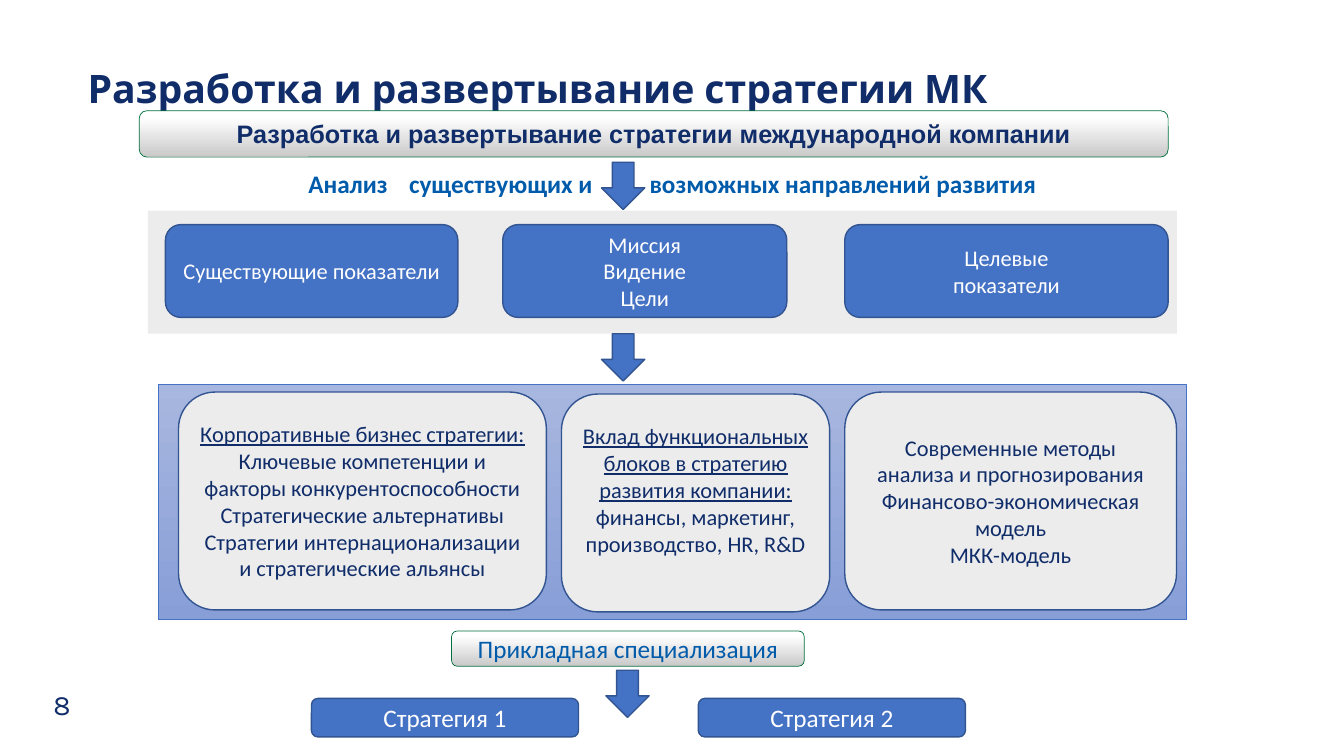
from dataclasses import dataclass

from lxml import etree
from pptx import Presentation
from pptx import util as u
from pptx.dml import color
from pptx.enum import shapes, text
from pptx.oxml import ns


@dataclass(frozen=True)
class Theme:
    navy: str = "102D69"
    accent: str = "005BAA"
    blue: str = "4472C4"
    edge: str = "325491"
    green: str = "00703C"
    pale: str = "ECECED"
    white: str = "FFFFFF"
    silver: tuple = (("C9C9C9", 0), ("FFFFFF", 0.86))
    haze: tuple = (("A8B7DF", 0), ("889ED7", 1))
    head: str = "Karla"
    banner: str = "Arial"
    body: str = "Calibri"
    title: int = 28
    number: int = 20
    large: int = 18
    small: int = 16


T = Theme()
KIND = shapes.MSO_SHAPE
CENTER = text.PP_ALIGN.CENTER
TOP, MIDDLE = text.MSO_ANCHOR.TOP, text.MSO_ANCHOR.MIDDLE


def rgb(value):
    return color.RGBColor.from_string(value)


def box_at(at):
    return [u.Cm(v) for v in at]


def fmt(size, tone, name=T.body, **extra):
    return {"size": u.Pt(size), "name": name, "color": tone, **extra}


def set_font(font, values):
    for key, value in values.items():
        if key == "color":
            font.color.rgb = rgb(value)
        else:
            setattr(font, key, value)


def add_tabs(p, stops):
    tabs = etree.SubElement(p._p.get_or_add_pPr(), ns.qn("a:tabLst"))
    for stop in stops:
        etree.SubElement(tabs, ns.qn("a:tab"), pos=str(u.Cm(stop)), algn="l")


def write(tf, lines, values, align=CENTER, anchor=MIDDLE, underlined=0, tabs=()):
    tf.word_wrap = True
    tf.vertical_anchor = anchor
    for i, line in enumerate(lines):
        p = tf.paragraphs[0] if i == 0 else tf.add_paragraph()
        p.alignment = align
        if tabs:
            add_tabs(p, tabs)
        r = p.add_run()
        r.text = line
        set_font(r.font, values)
        r.font.underline = i < underlined


def add_label(s, at, line, values, margin=None, **layout):
    tf = s.shapes.add_textbox(*box_at(at)).text_frame
    if margin is not None:
        for side in ("left", "right", "top", "bottom"):
            setattr(tf, f"margin_{side}", margin)
    write(tf, [line], values, anchor=TOP, **layout)


def add_block(s, kind, at, fill, line=None, weight=1, angle=90):
    sp = s.shapes.add_shape(kind, *box_at(at))
    sp.shadow.inherit = False
    if isinstance(fill, str):
        sp.fill.solid()
        sp.fill.fore_color.rgb = rgb(fill)
    else:
        sp.fill.gradient()
        sp.fill.gradient_angle = angle
        for stop, (tone, position) in zip(sp.fill.gradient_stops, fill):
            stop.color.rgb = rgb(tone)
            stop.position = position
    if line:
        sp.line.color.rgb = rgb(line)
        sp.line.width = u.Pt(weight)
    else:
        sp.line.fill.background()
    return sp


def add_banner(s, at, line, values):
    sp = add_block(s, KIND.ROUNDED_RECTANGLE, at, T.silver, T.green, 0.5)
    write(sp.text_frame, [line], values)


def add_button(s, at, lines, size):
    sp = add_block(s, KIND.ROUNDED_RECTANGLE, at, T.blue, T.edge)
    write(sp.text_frame, lines, fmt(size, T.white))


def add_card(s, at, lines, underlined=0, bottom=0.13):
    sp = add_block(s, KIND.ROUNDED_RECTANGLE, at, T.pale, T.edge)
    sp.text_frame.margin_bottom = u.Cm(bottom)
    write(sp.text_frame, lines, fmt(T.small, T.navy), underlined=underlined)


def main():
    prs = Presentation()
    prs.slide_width, prs.slide_height = u.Cm(33.87), u.Cm(19.05)
    s = prs.slides.add_slide(prs.slide_layouts[6])

    add_label(s, (0.64, 17.32, 1.85, 0.86), "8",
              fmt(T.number, T.navy, T.head), margin=0, align=CENTER)
    add_label(s, (2.21, 1.63, 28.83, 2.41), "Разработка и развертывание стратегии МК",
              fmt(T.title, T.navy, T.head, bold=True), margin=0, align=None)

    add_block(s, KIND.RECTANGLE, (3.73, 5.31, 25.93, 3.1), T.pale)
    add_banner(s, (3.51, 2.79, 25.93, 1.17),
               "Разработка и развертывание стратегии международной компании",
               fmt(T.large, T.navy, T.banner, bold=True))
    add_banner(s, (11.38, 15.9, 8.89, 0.89), "Прикладная специализация",
               fmt(T.large, T.accent))

    for left, top in ((15.16, 4.09), (15.16, 8.41), (15.27, 16.89)):
        add_block(s, KIND.DOWN_ARROW, (left, top, 1.09, 1.19), T.blue, T.edge)
    add_label(s, (7.52, 4.11, 23.24, 0.99),
              "Анализ\tсуществующих и\tвозможных направлений развития",
              fmt(T.large, T.accent, bold=True), align=None, tabs=(2.54, 8.6))

    for left, width, lines in (
        (4.17, 7.37, ["Существующие показатели"]),
        (12.67, 7.16, ["Миссия", "Видение", "Цели"]),
        (21.29, 8.15, ["Целевые", "показатели"]),
    ):
        add_button(s, (left, 5.66, width, 2.34), lines, T.small)
    for left, line in ((7.85, "Стратегия 1"), (17.6, "Стратегия 2")):
        add_button(s, (left, 17.6, 6.73, 0.97), [line], T.large)

    add_block(s, KIND.RECTANGLE, (3.99, 9.68, 25.91, 5.94), T.haze, T.blue, 0.5, 270)
    add_card(s, (4.5, 9.88, 9.27, 5.49), [
        "Корпоративные бизнес стратегии:",
        "Ключевые компетенции и факторы конкурентоспособности",
        "Стратегические альтернативы",
        "Стратегии интернационализации и стратегические альянсы",
    ], underlined=1)
    add_card(s, (14.15, 9.93, 6.76, 5.49), [
        "Вклад функциональных блоков в стратегию развития компании:",
        "финансы, маркетинг, производство, HR, R&D",
    ], underlined=1, bottom=0.81)
    add_card(s, (21.29, 9.88, 8.36, 5.49), [
        "Современные методы анализа и прогнозирования",
        "Финансово-экономическая модель",
        "МКК-модель",
    ])

    prs.save("out.pptx")


if __name__ == "__main__":
    main()
